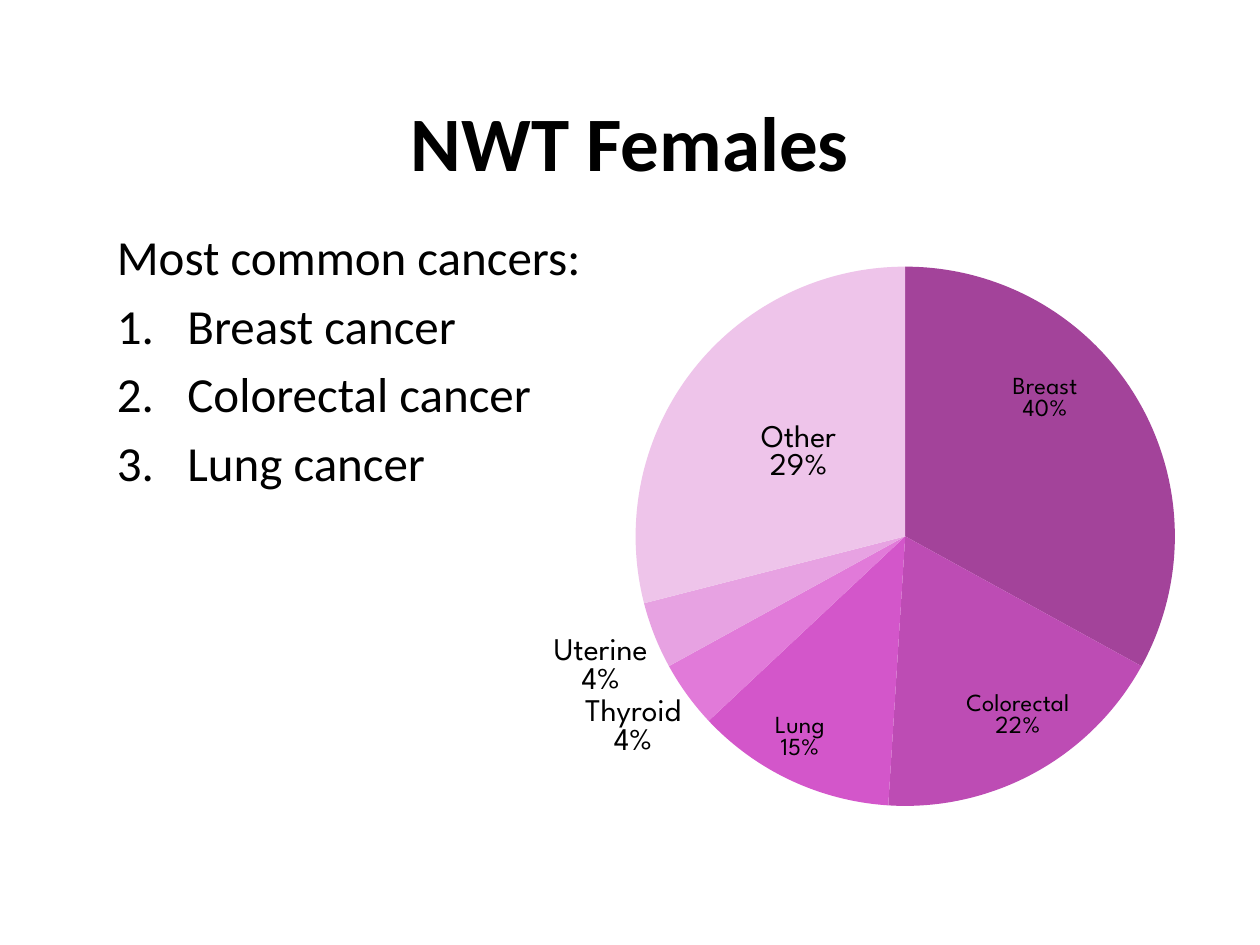
import pptx
import pptx.chart.data
import pptx.dml.color
import pptx.enum.chart
import pptx.enum.text
import pptx.oxml
import pptx.oxml.ns
import pptx.util
from pptx.util import Inches

C_NS = pptx.oxml.ns.nsdecls("c")


def rgb(hex_string):
    return pptx.dml.color.RGBColor.from_string(hex_string)


def set_font(font, color, **values):
    for name, value in values.items():
        setattr(font, name, value)
    font.color.rgb = rgb(color)


class Deck:
    """Holds the text style and the current slide."""

    body_font, chart_font, ink = "Calibri", "League Spartan", "000000"

    def __init__(self):
        self.prs = pptx.Presentation()
        self.prs.slide_width, self.prs.slide_height = Inches(10), Inches(7.5)
        self.s = self.prs.slides.add_slide(self.prs.slide_layouts[5])

    def add_text(self, p, text, size, bold=False):
        r = p.add_run()
        r.text = text
        set_font(r.font, self.ink, name=self.body_font, size=pptx.util.Pt(size), bold=bold)

    def title(self, text, box):
        sp = self.s.shapes.title
        for name, value in zip(("left", "top", "width", "height"), box):
            setattr(sp, name, Inches(value))
        tf = sp.text_frame
        tf.vertical_anchor = pptx.enum.text.MSO_ANCHOR.MIDDLE
        p = tf.paragraphs[0]
        p.alignment = pptx.enum.text.PP_ALIGN.CENTER
        self.add_text(p, text, 44, True)

    def numbered_list(self, heading, items, box):
        tf = self.s.shapes.add_textbox(*map(Inches, box)).text_frame
        tf.word_wrap = True
        for i, text in enumerate([heading, *items]):
            p = tf.add_paragraph() if i else tf.paragraphs[0]
            p.space_before = pptx.util.Pt(5.6)
            self.add_text(p, text, 28)
            if i:
                pPr = p._p.get_or_add_pPr()
                indent = Inches(0.56)
                pPr.set("marL", str(indent))
                pPr.set("indent", str(-indent))
                pPr.append(pptx.oxml.parse_xml(
                    f'<a:buAutoNum {pptx.oxml.ns.nsdecls("a")} type="arabicPeriod"/>'))

    def manual_layout(self, inner=False, **fractions):
        target = '<c:layoutTarget val="inner"/>' if inner else ""
        modes = '<c:xMode val="edge"/><c:yMode val="edge"/>' if inner else ""
        values = "".join(f'<c:{k} val="{v}"/>' for k, v in fractions.items())
        return pptx.oxml.parse_xml(
            f"<c:layout {C_NS}><c:manualLayout>{target}{modes}{values}"
            "</c:manualLayout></c:layout>")

    def pie(self, slices, custom_labels, centred, box):
        data = pptx.chart.data.CategoryChartData()
        data.categories = [name for name, _, _ in slices]
        data.add_series("Series 1", [value for _, value, _ in slices])
        kind = pptx.enum.chart.XL_CHART_TYPE.PIE
        chart = self.s.shapes.add_chart(kind, *map(Inches, box), data).chart
        chart.has_legend = chart.has_title = False
        style = {"name": self.chart_font, "size": pptx.util.Pt(18)}
        set_font(chart.font, self.ink, **style)
        series = chart.plots[0].series[0]
        for i, (_, _, color) in enumerate(slices):
            fill = series.points[i].format.fill
            fill.solid()
            fill.fore_color.rgb = rgb(color)

        position = pptx.enum.chart.XL_LABEL_POSITION
        labels = series.data_labels
        formats = {"show_category_name": True, "show_percentage": True,
                   "show_value": False, "position": position.OUTSIDE_END}
        for name, value in formats.items():
            setattr(labels, name, value)
        set_font(labels.font, self.ink, **style)

        for i, (text, _, _) in custom_labels.items():
            label = series.points[i].data_label
            label.text_frame.text = text
            for p in label.text_frame.paragraphs:
                for r in p.runs:
                    set_font(r.font, self.ink, name=self.chart_font, size=pptx.util.Pt(14))
        for i in (*custom_labels, centred):
            series.points[i].data_label.position = position.CENTER
        set_font(series.points[centred].data_label.font, self.ink, **style)

        root = chart._chartSpace
        for flag, value in (("showVal", 0), ("showCatName", 1), ("showPercent", 1)):
            for element in root.xpath(f".//c:dLbl/c:{flag}"):
                element.set("val", str(value))
        for element in root.xpath(".//c:dLbls//c:showBubbleSize"):
            element.addnext(pptx.oxml.parse_xml(f"<c:separator {C_NS}>\n</c:separator>"))
        for i, (_, x, y) in custom_labels.items():
            idx = root.xpath(f".//c:dLbl/c:idx[@val='{i}']")[0]
            idx.addnext(self.manual_layout(x=x, y=y))
        area = root.xpath(".//c:plotArea")[0]
        for old in area.xpath("c:layout"):
            area.remove(old)
        area.insert(0, self.manual_layout(inner=True, x=0.19, y=0.04, w=0.68, h=0.87))


def main():
    deck = Deck()
    deck.title("NWT Females", (0.5, 0.58, 9, 1.08))
    deck.numbered_list("Most common cancers:",
                       ["Breast cancer", "Colorectal cancer", "Lung cancer"],
                       (0.83, 1.75, 5.17, 3))
    slices = [("Breast", 33, "A3439A"), ("Colorectal", 18, "BD4CB4"),
              ("Lung", 12, "D356CA"), ("Thyroid", 4, "E17AD9"),
              ("Uterine", 4, "E7A2E2"), ("Other", 29, "EEC4EA")]
    custom_labels = {0: ("Breast\n40%", 0.03, -0.11),
                     1: ("Colorectal\n22%", 0.06, 0.1),
                     2: ("Lung\n15%", -0.06, 0.13)}
    deck.pie(slices, custom_labels, 5, (3.83, 1.92, 6.33, 4.92))
    deck.prs.save("out.pptx")


if __name__ == "__main__":
    main()
